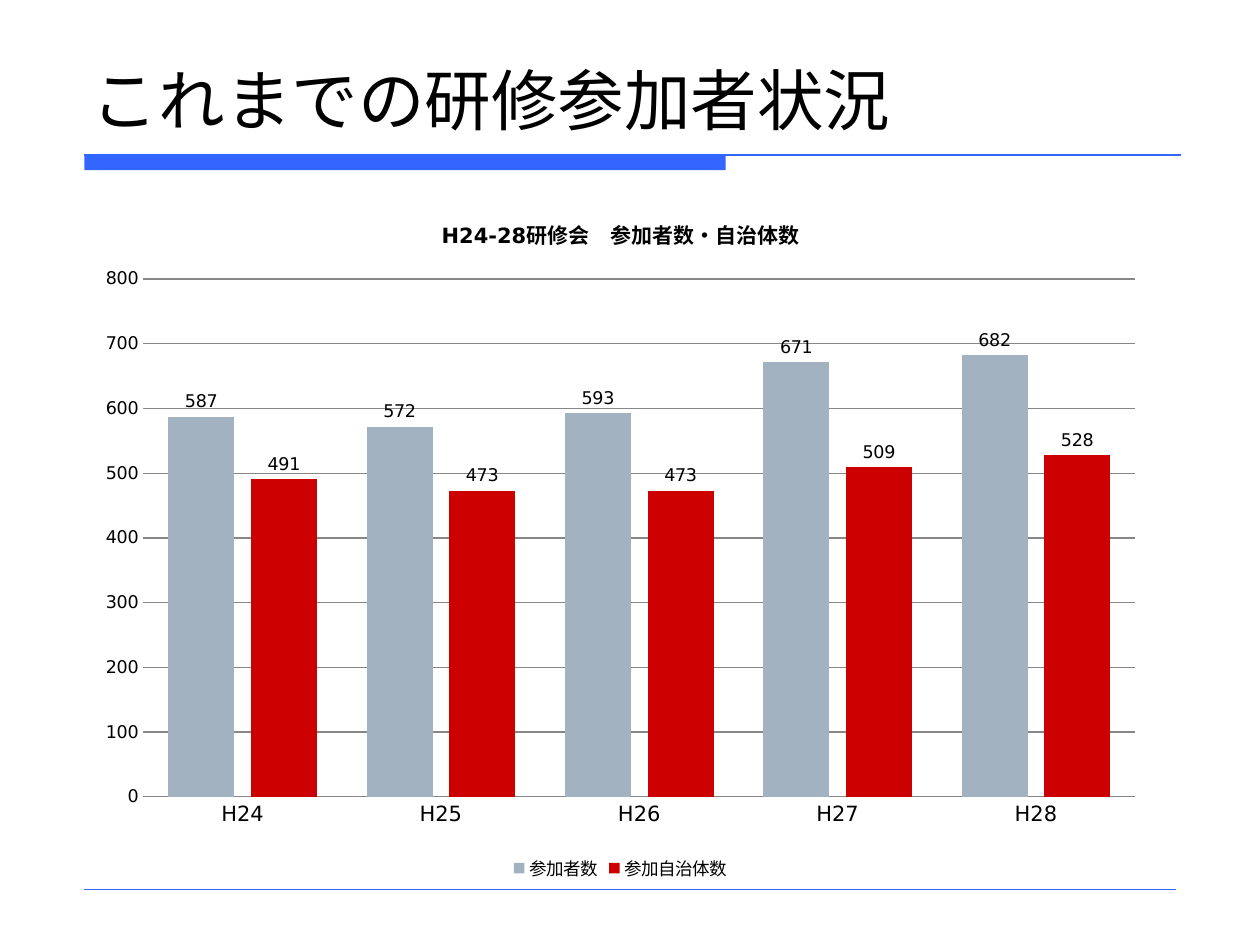
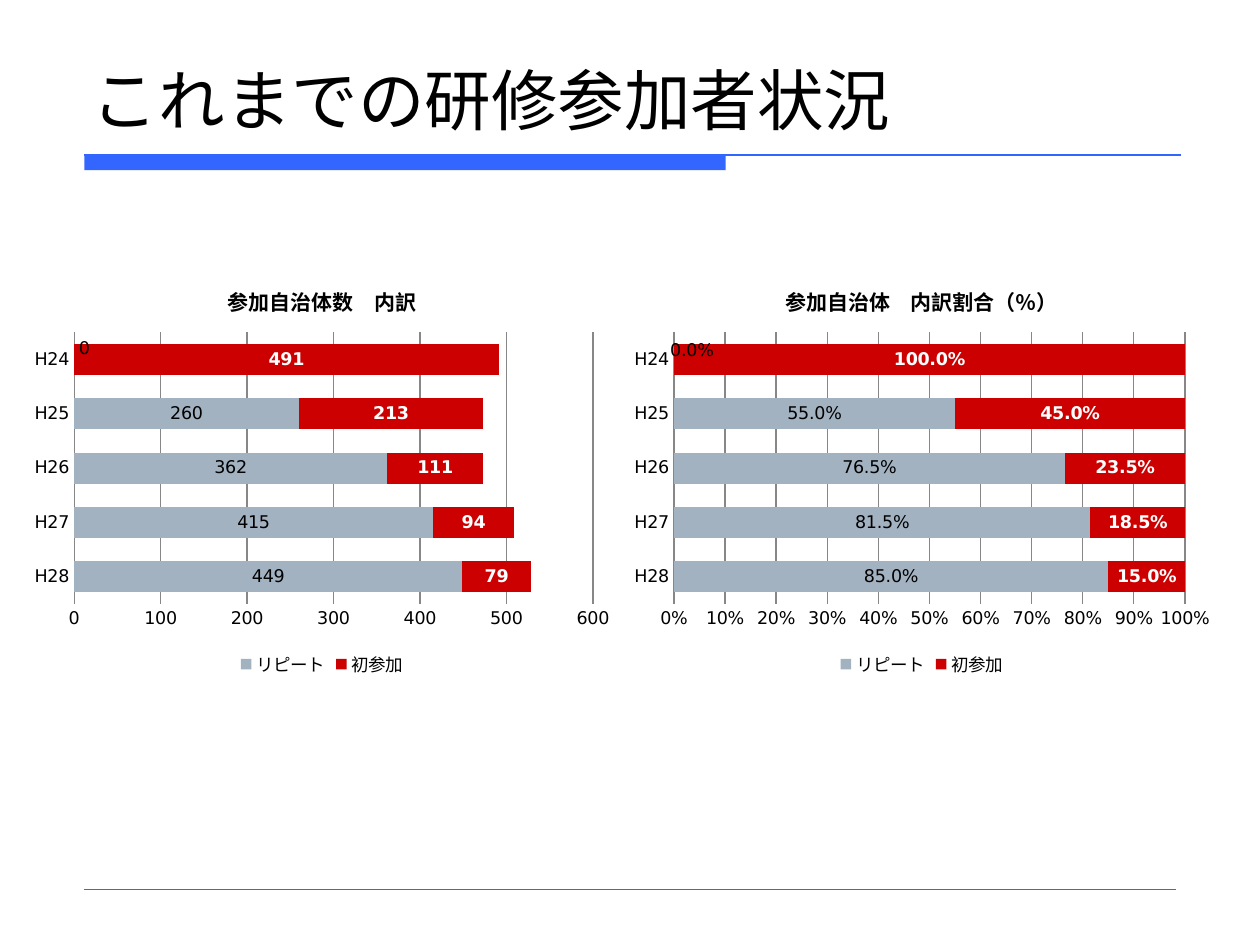
from lxml.etree import SubElement
from pptx import Presentation
from pptx.chart.data import CategoryChartData
from pptx.dml.color import RGBColor
from pptx.enum.chart import XL_CHART_TYPE, XL_LABEL_POSITION, XL_LEGEND_POSITION, XL_TICK_MARK
from pptx.enum.shapes import MSO_CONNECTOR, MSO_SHAPE
from pptx.enum.text import MSO_ANCHOR, MSO_AUTO_SIZE, PP_ALIGN
from pptx.oxml import parse_xml
from pptx.oxml.ns import nsdecls, qn
from pptx.util import Inches, Pt

COLORS = {
    "band": "3366FF",
    "text": "000000",
    "grid": "878787",
    "gray": "A3B2C1",
    "red": "CC0000",
    "white": "FFFFFF",
}
FONT = "DejaVu Sans"
PAGE_TITLE = "これまでの研修参加者状況"
WIDTH, HEIGHT = Inches(10), Inches(7.5)
LEFT = Inches(0.67)
BAND_TOP, BAND_WIDTH, BAND_HEIGHT = Inches(1.23), Inches(5.09), Inches(0.12)
RULES = [(BAND_TOP, Inches(9.37), 0.75), (Inches(7.06), Inches(9.33), 0.25)]
HALF_WIDTH, HALF_LEFT, HALF_TOP = 4.75, 0.18, 2.1
YEARS = ["H24", "H25", "H26", "H27", "H28"]
YEARS_UPWARD = YEARS[::-1]

PAGES = [
    [
        dict(
            title="H24-28研修会　参加者数・自治体数",
            kind=XL_CHART_TYPE.COLUMN_CLUSTERED,
            area=(0.67, 1.52, 8.51, 5.51),
            plot_area=(0.055, 0.126, 0.925, 0.746),
            years=YEARS,
            year_size=12,
            overlap=-25,
            scale=(800, 100),
            formats=("General", "General"),
            series={
                "参加者数": [587, 572, 593, 671, 682],
                "参加自治体数": [491, 473, 473, 509, 528],
            },
        )
    ],
    [
        dict(
            title="参加自治体数　内訳",
            kind=XL_CHART_TYPE.BAR_STACKED,
            area=(HALF_LEFT, HALF_TOP, HALF_WIDTH, 3.31),
            plot_area=(0.086, 0.162, 0.867, 0.652),
            years=YEARS_UPWARD,
            year_size=10,
            overlap=100,
            scale=(600, 100),
            formats=("General", "General"),
            zero_offset=(0.017, -0.026),
            series={
                "リピート": [449, 415, 362, 260, 0],
                "初参加": [79, 94, 111, 213, 491],
            },
        ),
        dict(
            title="参加自治体　内訳割合（％）",
            kind=XL_CHART_TYPE.BAR_STACKED_100,
            area=(HALF_LEFT + HALF_WIDTH + 0.01, HALF_TOP, HALF_WIDTH, 3.31),
            plot_area=(0.086, 0.162, 0.854, 0.652),
            years=YEARS_UPWARD,
            year_size=10,
            overlap=100,
            scale=(1, 0.1),
            formats=("0%", "0.0%"),
            zero_offset=(0.03, -0.02),
            series={
                "リピート": [0.85, 0.815, 0.765, 0.55, 0],
                "初参加": [0.15, 0.185, 0.235, 0.45, 1],
            },
        ),
    ],
]


def write(frame, text, size=12, bold=False, color="text", align=None):
    para = frame.paragraphs[0]
    para.alignment = align
    span = para.add_run()
    span.text = text
    span.font.name = FONT
    span.font.size = Pt(size)
    span.font.bold = bold
    span.font.color.rgb = RGBColor.from_string(COLORS[color])


def manual_layout(**settings):
    layout = parse_xml(f"<c:layout {nsdecls('c')}/>")
    manual = SubElement(layout, qn("c:manualLayout"))
    for name, value in settings.items():
        SubElement(manual, qn(f"c:{name}")).set("val", str(value))
    return layout


deck = Presentation()
deck.slide_width, deck.slide_height = WIDTH, HEIGHT

for charts in PAGES:
    page = deck.slides.add_slide(deck.slide_layouts[5])

    heading = page.shapes.title
    heading.left, heading.top = Inches(0.63), Inches(0.33)
    heading.width, heading.height = Inches(8.75), Inches(0.82)
    heading.text_frame.auto_size = MSO_AUTO_SIZE.NONE
    heading.text_frame.vertical_anchor = MSO_ANCHOR.BOTTOM
    write(heading.text_frame, PAGE_TITLE, size=38, align=PP_ALIGN.LEFT)

    band = page.shapes.add_shape(MSO_SHAPE.RECTANGLE, LEFT, BAND_TOP, BAND_WIDTH, BAND_HEIGHT)
    band.shadow.inherit = False
    band.fill.solid()
    band.fill.fore_color.rgb = RGBColor.from_string(COLORS["band"])
    band.line.fill.background()

    for top, right, weight in RULES:
        rule = page.shapes.add_connector(MSO_CONNECTOR.STRAIGHT, LEFT, top, right, top)
        rule.line.color.rgb = RGBColor.from_string(COLORS["band"])
        rule.line.width = Pt(weight)
        SubElement(rule._element.spPr, qn("a:effectLst"))

    for item in charts:
        axis_format, label_format = item["formats"]
        data = CategoryChartData(number_format=label_format)
        data.categories = item["years"]
        for name, values in item["series"].items():
            data.add_series(name, values)
        area = [Inches(length) for length in item["area"]]
        chart = page.shapes.add_chart(item["kind"], *area, data).chart
        chart.font.name = FONT
        chart.font.size = Pt(10)
        chart.font.color.rgb = RGBColor.from_string(COLORS["text"])
        chart.has_title = True
        chart.chart_title.include_in_layout = False
        write(chart.chart_title.text_frame, item["title"], bold=True)
        chart.has_legend = True
        chart.legend.position = XL_LEGEND_POSITION.BOTTOM
        chart.legend.include_in_layout = False

        plot_element = chart._chartSpace.chart.plotArea
        for old_layout in plot_element.findall(qn("c:layout")):
            plot_element.remove(old_layout)
        x, y, w, h = item["plot_area"]
        plot_element.insert(0, manual_layout(
            layoutTarget="inner", xMode="edge", yMode="edge", x=x, y=y, w=w, h=h))

        years, amounts = chart.category_axis, chart.value_axis
        for axis in (years, amounts):
            axis.major_tick_mark = XL_TICK_MARK.NONE
            axis.minor_tick_mark = XL_TICK_MARK.NONE
        years.has_major_gridlines = False
        years.tick_labels.font.size = Pt(item["year_size"])
        amounts.has_major_gridlines = True
        for line in (years.format.line, amounts.major_gridlines.format.line):
            line.color.rgb = RGBColor.from_string(COLORS["grid"])
            line.width = Pt(0.75)
        amounts.format.line.fill.background()
        amounts.minimum_scale = 0
        amounts.maximum_scale, amounts.major_unit = item["scale"]
        amounts.tick_labels.number_format = axis_format
        amounts.tick_labels.number_format_is_linked = False

        plot = chart.plots[0]
        plot.gap_width = 75
        plot.overlap = item["overlap"]
        plot.vary_by_categories = False
        stacked = "zero_offset" in item
        for series, color in zip(plot.series, ("gray", "red")):
            series.invert_if_negative = False
            series.format.fill.solid()
            series.format.fill.fore_color.rgb = RGBColor.from_string(COLORS[color])
            labels = series.data_labels
            labels.show_value = True
            labels.number_format = label_format
            labels.number_format_is_linked = False
            labels.position = XL_LABEL_POSITION.CENTER if stacked else XL_LABEL_POSITION.OUTSIDE_END
            emphasized = stacked and color == "red"
            labels.font.size = Pt(10)
            labels.font.bold = emphasized
            labels.font.color.rgb = RGBColor.from_string(COLORS["white" if emphasized else "text"])

        if stacked:
            repeaters = plot.series[0]
            repeaters.points[4].data_label.position = XL_LABEL_POSITION.CENTER
            zero_label = repeaters._element.find(".//" + qn("c:dLbl"))
            x, y = item["zero_offset"]
            zero_label.insert(1, manual_layout(x=x, y=y))
            zero_label.insert(2, parse_xml(
                f'<c:numFmt {nsdecls("c")} formatCode="{label_format}" sourceLinked="0"/>'))

deck.save("out.pptx")
